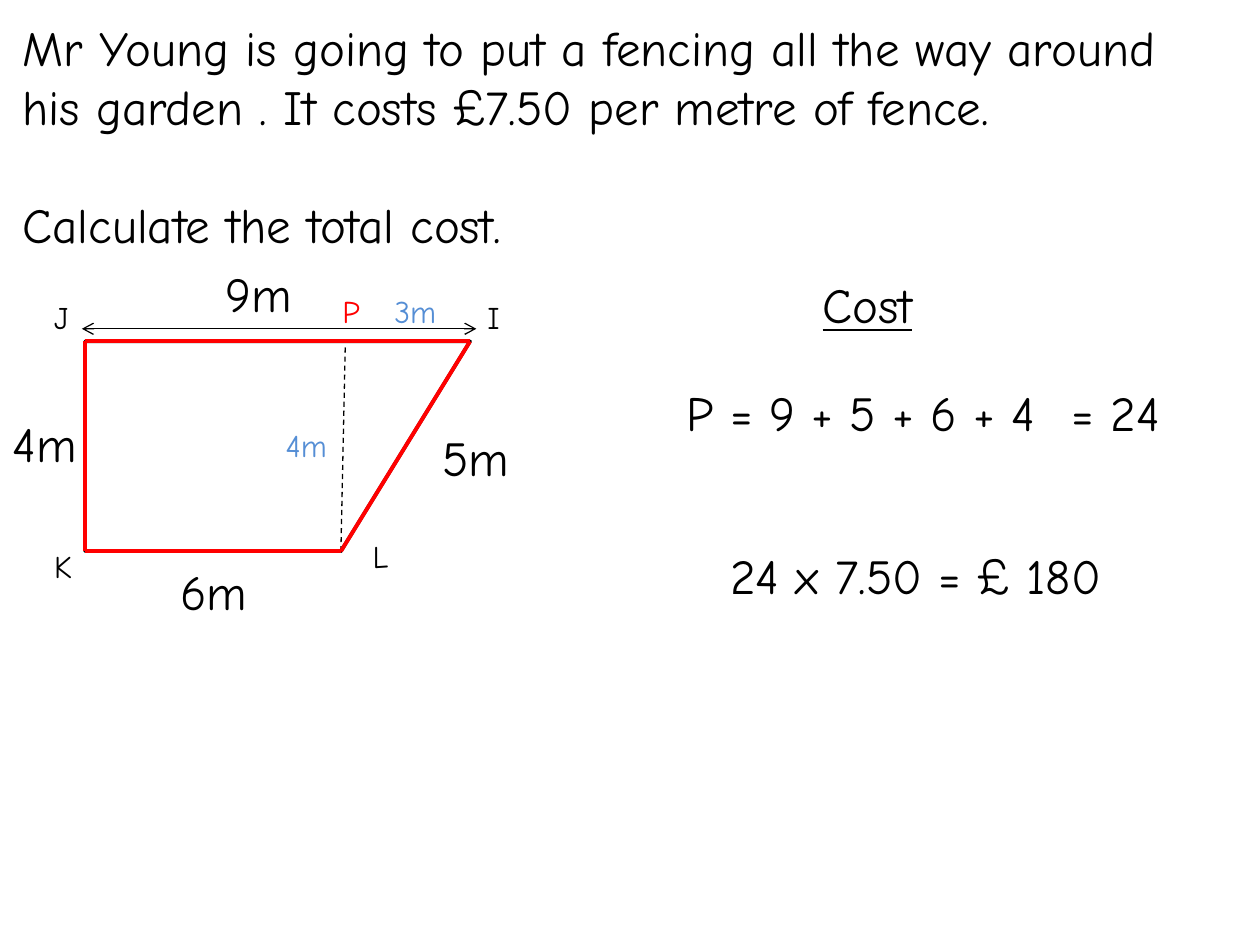
from pptx import Presentation
from pptx.dml.color import RGBColor
from pptx.enum.dml import MSO_LINE
from pptx.enum.shapes import MSO_CONNECTOR
from pptx.enum.text import MSO_AUTO_SIZE
from pptx.oxml.ns import qn
from pptx.util import Pt
from lxml import etree

STRAIGHT = MSO_CONNECTOR.STRAIGHT
DASH = MSO_LINE.DASH
GROW = MSO_AUTO_SIZE.SHAPE_TO_FIT_TEXT
FONT = "Comic Neue"
HEX = {"black": "000000", "red": "FF0000", "blue": "558ED5"}

deck = Presentation()
deck.slide_width, deck.slide_height = Pt(720), Pt(540)
slide = deck.slides.add_slide(deck.slide_layouts[6])
shapes = slide.shapes


def write(lines, x, y, w, h, size=28, ink="black"):
    box = shapes.add_textbox(Pt(x), Pt(y), Pt(w), Pt(h))
    frame = box.text_frame
    frame.word_wrap = False
    frame.auto_size = GROW
    frame.text = lines
    for para in frame.paragraphs:
        para.font.name = FONT
        para.font.size = Pt(size)
        para.font.color.rgb = RGBColor.from_string(HEX[ink])
    return frame.paragraphs


def draw(start, end, ink="black", width=0.75):
    line = shapes.add_connector(STRAIGHT, *map(Pt, start + end))
    line.line.color.rgb = RGBColor.from_string(HEX[ink])
    line.line.width = Pt(width)
    etree.SubElement(line._element.spPr, qn("a:effectLst"))
    return line


# Garden outline
J, I, L, K = (48.6, 195.1), (268.6, 195.1), (194.8, 315), (48.6, 315)
pen = shapes.build_freeform(Pt(J[0]), Pt(J[1]))
pen.add_line_segments([(Pt(x), Pt(y)) for x, y in (I, L, K)], close=True)
garden = pen.convert_to_shape()
garden.shadow.inherit = False
garden.fill.background()
garden.line.color.rgb = RGBColor.from_string(HEX["black"])
garden.line.width = Pt(2)

# Question
question = write(
    "Mr Young is going to put a fencing all the way around\n"
    "his garden . It costs £7.50 per metre of fence.\n"
    "Calculate the total cost.", 5.8, 6.5, 717, 177)
question[2].space_before = Pt(33.7)

# Dashed height and dimension arrow
draw(L, (197.3, 197.3)).line.dash_style = DASH
span = draw((46.8, 187.9), (272.2, 187.9))
for end in ("headEnd", "tailEnd"):
    etree.SubElement(span.line._get_or_add_ln(), qn("a:" + end), type="arrow")

# Fence along each side
for start, end in ((J, I), (L, I), (K, L), (K, J)):
    draw(start, end, "red", 2.25)

# Corner names and inner lengths
for name, x, y, w, ink in (
    ("I", 271.4, 167, 31.7, "black"),
    ("J", 23.8, 167, 34.6, "black"),
    ("K", 23.8, 308.9, 46, "black"),
    ("L", 205.9, 303.1, 42.5, "black"),
    ("P", 188.6, 163.4, 42.5, "red"),
    ("3m", 218.2, 163.4, 39.6, "blue"),
    ("4m", 156.2, 239.8, 39.6, "blue"),
):
    write(name, x, y, w, 29, 18, ink)

# Side lengths
for size, x, y in (("6m", 95.8, 317.5), ("9m", 121.7, 146.9),
                   ("4m", 0, 232.6), ("5m", 245.5, 240.5)):
    write(size, x, y, 54, 41)

# Cost working
cost = write("Cost", 463, 153.4, 73.4, 41)
cost[0].font.underline = True
write("P = 9 + 5 + 6 + 4", 385.2, 215.3, 221, 41)
write("= 24", 605.5, 215.3, 72, 41)
write("24 x 7.50 = £ 180", 410.4, 308.2, 251.3, 41)

deck.save("out.pptx")
